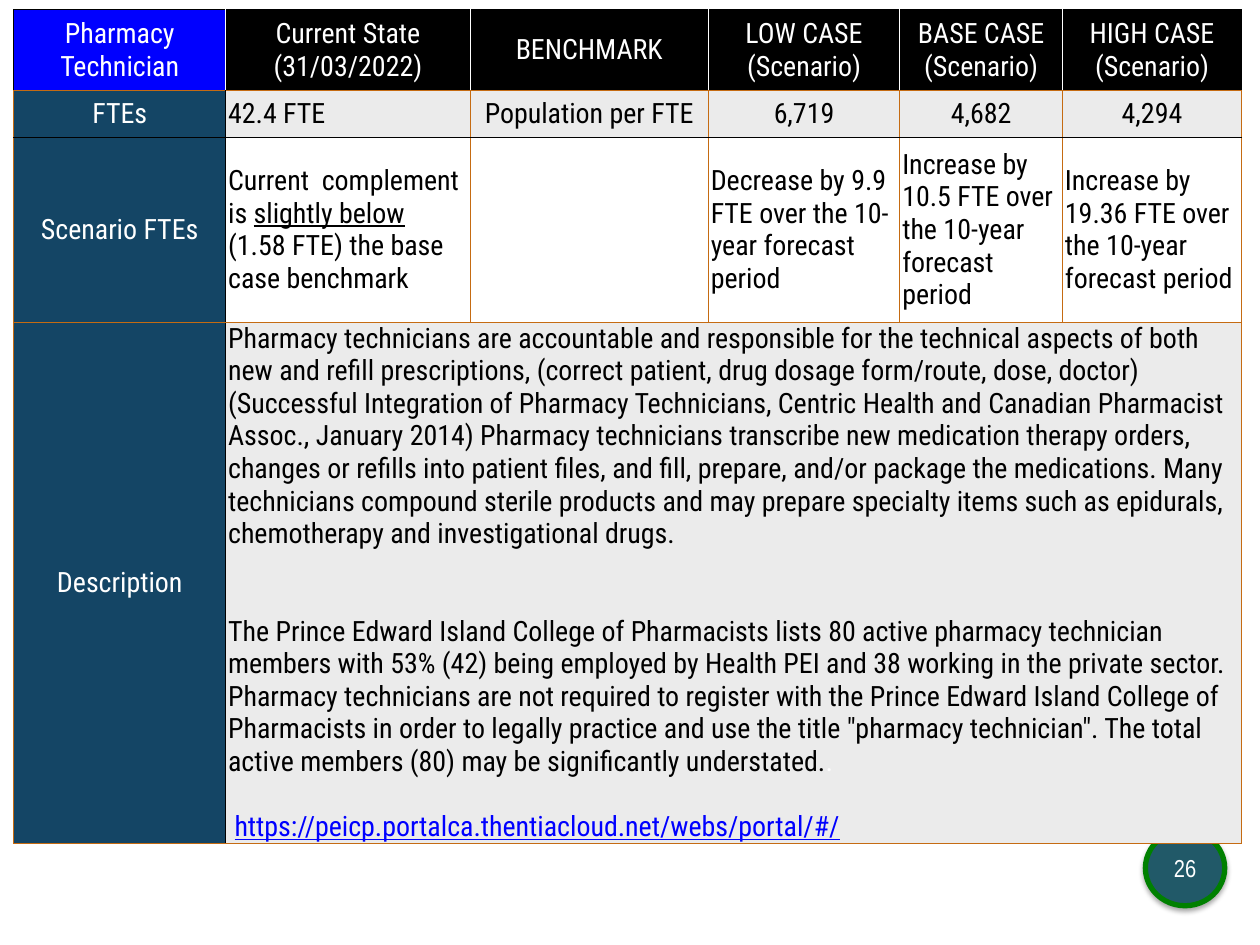
from lxml.etree import SubElement
from pptx import Presentation
from pptx.dml.color import RGBColor
from pptx.enum.shapes import MSO_SHAPE as SHAPE
from pptx.enum.text import MSO_ANCHOR as ANCHOR, PP_ALIGN as ALIGN
from pptx.oxml import parse_xml
from pptx.oxml.ns import nsdecls, qn
from pptx.util import Cm, Pt

WHITE = RGBColor(0xFF, 0xFF, 0xFF)
BLACK = RGBColor(0, 0, 0)
BLUE = RGBColor(0, 0, 0xFF)
NAVY = RGBColor(0x14, 0x45, 0x65)
GREY = RGBColor(0xEB, 0xEB, 0xEB)
ORANGE = RGBColor(0xC5, 0x6B, 0x12)
TEAL = RGBColor(0x21, 0x59, 0x68)
GREEN = RGBColor(0, 0x80, 0)
FONT = "Roboto Condensed"

# Content: a cell is a list of paragraphs, a paragraph a string or a list of runs
DUTIES = (
    "Pharmacy technicians are accountable and responsible for the technical aspects of both "
    "new and refill prescriptions, (correct patient, drug dosage form/route, dose, doctor) "
    "(Successful Integration of Pharmacy Technicians, Centric Health and Canadian Pharmacist "
    "Assoc., January 2014) Pharmacy technicians transcribe new medication therapy orders, "
    "changes or refills into patient files, and fill, prepare, and/or package the medications. "
    "Many technicians compound sterile products and may prepare specialty items such as "
    "epidurals, chemotherapy and investigational drugs.")
MEMBERS = (
    "The Prince Edward Island College of Pharmacists lists 80 active pharmacy technician "
    "members with 53% (42) being employed by Health PEI and 38 working in the private sector. "
    "Pharmacy technicians are not required to register with the Prince Edward Island College of "
    "Pharmacists in order to legally practice and use the title \"pharmacy technician\". The total "
    "active members (80) may be significantly understated.")
LINK = "https://peicp.portalca.thentiacloud.net/webs/portal/#/"

ROWS = [
    [["Pharmacy Technician"], ["Current State (31/03/2022)"], ["BENCHMARK"],
     ["LOW CASE", "(Scenario)"], ["BASE CASE", "(Scenario)"], ["HIGH CASE (Scenario)"]],
    [["FTEs"], ["42.4 FTE"], ["Population per FTE"], ["6,719"], ["4,682"], ["4,294"]],
    [["Scenario FTEs"],
     [[("Current  complement is ", {}), ("slightly below ", {"underline": True}),
       ("(1.58 FTE) the base case benchmark", {})]],
     [],
     ["Decrease by 9.9 FTE over the 10-year forecast period"],
     ["Increase by 10.5 FTE over the 10-year forecast period"],
     ["Increase by 19.36 FTE over the 10-year forecast period"]],
    [["Description"],
     [DUTIES,
      [(MEMBERS, {}), (".", {"color": WHITE})],
      [(" ", {}), (LINK, {"color": BLUE, "underline": True})]],
     [], [], [], []],
]
COL_WIDTHS = [4.27, 4.93, 4.8, 3.86, 3.28, 3.61]
ROW_HEIGHTS = [1.63, 0.94, 3.73, 9.83]
ROW_FILLS = [BLACK, GREY, None, GREY]
ROW_LINES = [BLACK, ORANGE, BLACK, ORANGE, ORANGE]
HEAD_COL_LINES = [BLACK] + [WHITE] * 5 + [BLACK]
BODY_COL_LINES = [ORANGE, BLACK] + [ORANGE] * 5
DESCRIPTION_GAPS = [0, 37.2, 18.6]


def add_text(p, text, color=BLACK, size=16, font=FONT, underline=None, align=None):
    if align is not None:
        p.alignment = align
    r = p.add_run()
    r.text = text
    r.font.name, r.font.size = font, Pt(size)
    r.font.color.rgb = color
    r.font.underline = underline


def set_borders(cell, **colors):
    tc_pr = cell._tc.get_or_add_tcPr()
    for side, color in colors.items():
        ln = SubElement(tc_pr, qn(f"a:ln{side}"), w=str(Pt(0.75)))
        SubElement(SubElement(ln, qn("a:solidFill")), qn("a:srgbClr"), val=str(color))


def fill_cell(cell, i, j, paragraphs):
    col_lines = HEAD_COL_LINES if i == 0 else BODY_COL_LINES
    set_borders(cell, L=col_lines[j], R=col_lines[j + 1], T=ROW_LINES[i], B=ROW_LINES[i + 1])
    fill = ROW_FILLS[i]
    if j == 0:
        fill = BLUE if i == 0 else NAVY
    if fill is None:
        cell.fill.background()
    else:
        cell.fill.solid()
        cell.fill.fore_color.rgb = fill
    cell.vertical_anchor = ANCHOR.MIDDLE
    cell.margin_left = cell.margin_right = Cm(0.05)
    cell.margin_top = cell.margin_bottom = 0

    color = WHITE if i == 0 or j == 0 else BLACK
    centred = i == 0 or j == 0 or (i == 1 and j > 1)
    tf = cell.text_frame
    for n, runs in enumerate(paragraphs):
        p = tf.add_paragraph() if n else tf.paragraphs[0]
        if n and i == 3:
            p.space_before = Pt(DESCRIPTION_GAPS[n])
        for text, fmt in [(runs, {})] if isinstance(runs, str) else runs:
            add_text(p, text, align=ALIGN.CENTER if centred else ALIGN.LEFT,
                     **{"color": color, **fmt})


prs = Presentation()
prs.slide_width, prs.slide_height = Cm(25.4), Cm(19.05)
s = prs.slides.add_slide(prs.slide_layouts[6])

# Page number badge, behind the table
badge = s.shapes.add_shape(SHAPE.OVAL, Cm(23.09), Cm(16.74), Cm(1.6), Cm(1.52))
badge.fill.solid()
badge.fill.fore_color.rgb = TEAL
badge.line.color.rgb = GREEN
badge.line.width = Pt(3)
badge._element.spPr.append(parse_xml(
    f'<a:effectLst {nsdecls("a")}><a:outerShdw blurRad="{Pt(3.1)}" dist="{Pt(1.8)}" '
    'dir="5400000" rotWithShape="0"><a:srgbClr val="000000"><a:alpha val="35000"/>'
    '</a:srgbClr></a:outerShdw></a:effectLst>'))
tf = badge.text_frame
tf.margin_left = tf.margin_right = tf.margin_top = tf.margin_bottom = 0
tf.vertical_anchor = ANCHOR.MIDDLE
add_text(tf.paragraphs[0], "26", color=WHITE, size=14, font="Arial Narrow", align=ALIGN.CENTER)

# Staffing table
table = s.shapes.add_table(len(ROW_HEIGHTS), len(COL_WIDTHS), Cm(0.28), Cm(0.2),
                           Cm(sum(COL_WIDTHS)), Cm(sum(ROW_HEIGHTS))).table
table.first_row = table.horz_banding = False
for col, width in zip(table.columns, COL_WIDTHS):
    col.width = Cm(width)
for row, height in zip(table.rows, ROW_HEIGHTS):
    row.height = Cm(height)
table.cell(3, 1).merge(table.cell(3, 5))
for i, row in enumerate(ROWS):
    for j, paragraphs in enumerate(row):
        fill_cell(table.cell(i, j), i, j, paragraphs)

prs.save("out.pptx")
